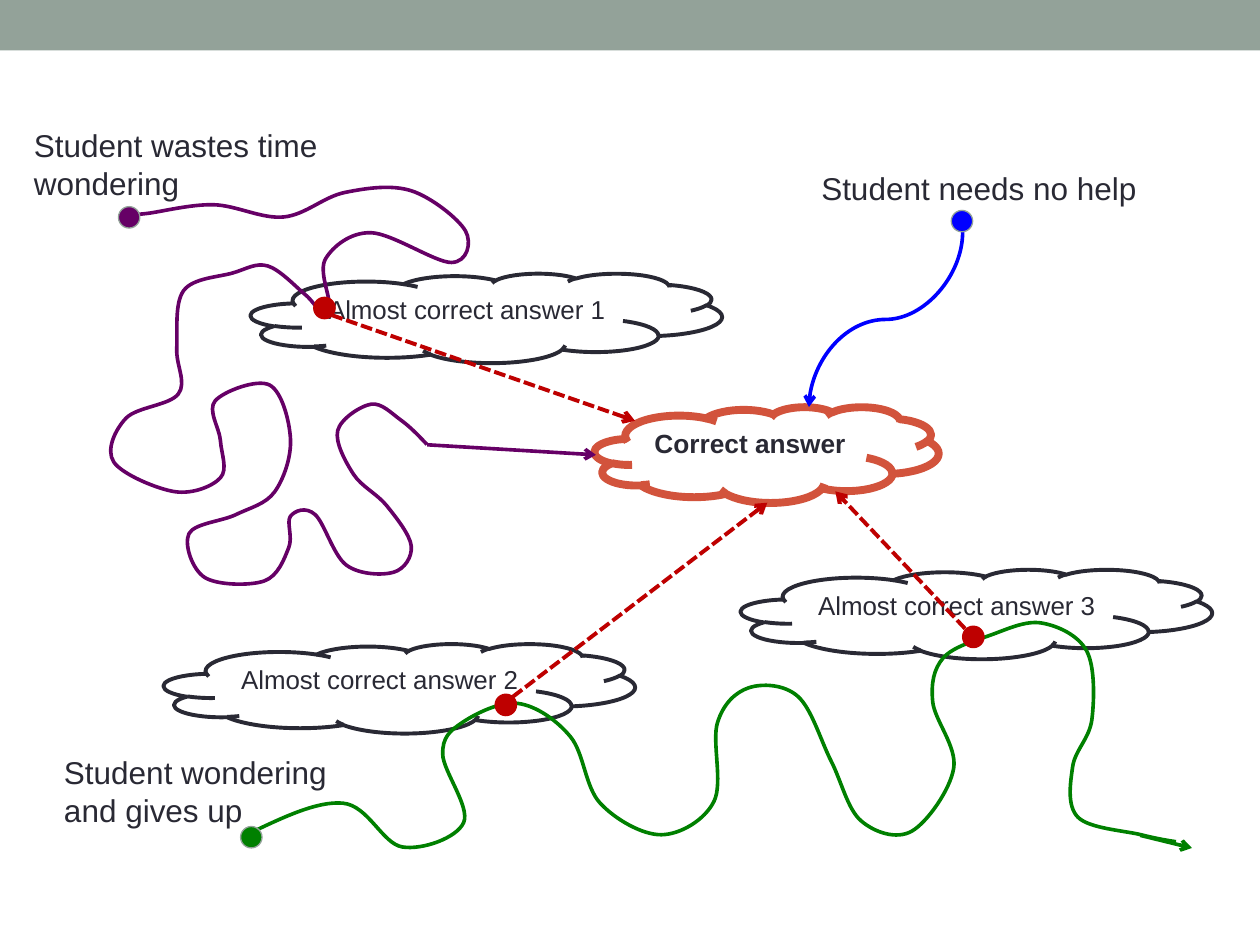
"""Build a slide of student paths wandering towards a correct answer."""
from pptx import Presentation, util as u
from pptx.dml.color import RGBColor
from pptx.enum import dml, shapes, text
from pptx.oxml import ns, xmlchemy

INK, SAGE, RUST = "292934", "93A299", "D2533C"
PURPLE, BLUE, GREEN, RED = "660066", "0000FF", "008000", "BE0000"
PATH_WIDTH, HINT_WIDTH = 2.08, 2.25
DOT_SIZE = 12.24

ALMOST = dict(size=(269.28, 51.12), color=INK, weight=2.25, font_size=14.8, bold=False)
CORRECT = dict(size=(196.56, 54.72), color=RUST, weight=4.5, font_size=15, bold=True)
CLOUDS = [
    ("Almost correct answer 1", (143.28, 156.24), ALMOST),
    ("Almost correct answer 2", (93.6, 367.92), ALMOST),
    ("Almost correct answer 3", (423.36, 325.44), ALMOST),
    ("Correct answer", (339.84, 232.56), CORRECT),
]
LABELS = [
    ("Student needs no help", 462.24, 92.88, 198.72, 28.8),
    ("Student wondering and gives up", 29.52, 426.96, 170.64, 51.12),
    ("Student wastes time wondering", 12.24, 68.4, 187.92, 51.12),
]
WANDERINGS = [
    (GREEN, [
        (143, 476), (196, 459), (230, 484), (265, 470), (253, 431), (264, 413),
        (296, 402), (326, 421), (343, 459), (378, 477), (408, 458), (410, 413),
        (428, 393), (456, 398), (475, 435), (492, 469), (521, 475), (545, 439),
        (533, 401), (539, 376), (566, 363), (595, 356), (621, 372), (624, 411),
        (613, 438), (616, 467), (652, 477), (672, 481)]),
    (PURPLE, [
        (78, 122), (84, 122), (122, 117), (162, 124), (197, 110), (235, 109),
        (266, 132), (258, 150), (212, 133), (186, 148), (188, 174), (182, 176),
        (174, 168), (153, 152), (133, 156), (105, 166), (101, 199), (102, 225),
        (72, 239), (65, 264), (100, 281), (126, 273), (126, 252), (123, 229),
        (154, 220), (166, 251), (157, 281), (135, 294), (108, 305), (117, 330),
        (151, 332), (165, 313), (166, 295), (180, 294), (198, 323), (225, 327),
        (235, 312), (221, 289), (202, 271), (193, 246), (212, 231), (229, 240),
        (244, 254)]),
]
ENDINGS = [
    (GREEN, (651.6, 477.36), (681.12, 484.56)),
    (PURPLE, (244.08, 254.16), (340.56, 259.92)),
]
DIRECT_START, DIRECT_END = (550.08, 132.48), (462.24, 232.56)
HINTS = [
    ((189.36, 180), (362.88, 240.48)),
    ((293.04, 398.16), (438.48, 287.28)),
    ((551.52, 359.28), (477.36, 280.8)),
]
DOTS = [
    (PURPLE, SAGE, 67.68, 118.08), (BLUE, SAGE, 543.6, 120.24),
    (GREEN, SAGE, 137.52, 472.32), (RED, RED, 179.28, 169.92),
    (RED, RED, 282.96, 396.72), (RED, RED, 550.08, 357.84),
]


def rgb(color):
    return RGBColor.from_string(color)


def points(*lengths):
    return [u.Pt(length) for length in lengths]


def style(shape, fill=None, line=None, weight=0.75):
    shape.shadow.inherit = False
    if fill:
        shape.fill.solid()
        shape.fill.fore_color.rgb = rgb(fill)
    else:
        shape.fill.background()
    if line:
        shape.line.color.rgb = rgb(line)
        shape.line.width = u.Pt(weight)
    else:
        shape.line.fill.background()


def write(shape, words, size, bold=False):
    frame = shape.text_frame
    frame.word_wrap = True
    frame.vertical_anchor = text.MSO_ANCHOR.TOP
    para = frame.paragraphs[0]
    para.text = words
    para.alignment = text.PP_ALIGN.LEFT
    para.font.name, para.font.size, para.font.bold = "Arial", u.Pt(size), bold
    para.font.color.rgb = rgb(INK)


def add_arrow(page, start, end, color, weight, kind=shapes.MSO_CONNECTOR.STRAIGHT):
    arrow = page.shapes.add_connector(kind, *points(*start, *end))
    arrow.line.color.rgb = rgb(color)
    arrow.line.width = u.Pt(weight)
    props = arrow._element.spPr
    head = xmlchemy.OxmlElement("a:tailEnd")
    head.set("type", "arrow")
    props.find(ns.qn("a:ln")).append(head)
    props.append(xmlchemy.OxmlElement("a:effectLst"))
    return arrow


def add_upright_curve(page, start, end, color, weight):
    (x1, y1), (x2, y2) = start, end
    middle_x, middle_y = (x1 + x2) / 2, (y1 + y2) / 2
    half_width, half_height = (y2 - y1) / 2, (x1 - x2) / 2
    curve = add_arrow(page, (middle_x - half_width, middle_y - half_height),
                      (middle_x + half_width, middle_y + half_height),
                      color, weight, shapes.MSO_CONNECTOR.CURVE)
    curve._element.spPr.find(ns.qn("a:xfrm")).set("rot", str(90 * 60000))


def smooth_spans(knots):
    last = len(knots) - 1
    for i in range(last):
        a, b = knots[i], knots[i + 1]
        leave = [p + (q - o) / 6 for o, p, q in zip(knots[max(i - 1, 0)], a, b)]
        reach = [q - (r - p) / 6 for p, q, r in zip(a, b, knots[min(i + 2, last)])]
        if i == 0:
            leave = [(p + c) / 2 for p, c in zip(a, reach)]
        if i == last - 1:
            reach = [(q + c) / 2 for q, c in zip(b, leave)]
        yield leave, reach, b


def add_wandering(page, color, knots):
    knots = [points(*knot) for knot in knots]
    builder = page.shapes.build_freeform(*knots[0])
    builder.add_line_segments(knots[1:], close=False)
    shape = builder.convert_to_shape()
    style(shape, line=color, weight=PATH_WIDTH)
    segments = list(shape._element.iter(ns.qn("a:lnTo")))
    for segment, span in zip(segments, smooth_spans(knots)):
        bezier = xmlchemy.OxmlElement("a:cubicBezTo")
        for x, y in span:
            point = xmlchemy.OxmlElement("a:pt")
            point.set("x", str(round(x - shape.left)))
            point.set("y", str(round(y - shape.top)))
            bezier.append(point)
        segment.getparent().replace(segment, bezier)


def main():
    deck = Presentation()
    deck.slide_width, deck.slide_height = points(720, 540)
    page = deck.slides.add_slide(deck.slide_layouts[6])
    preset = shapes.MSO_SHAPE

    band = page.shapes.add_shape(preset.RECTANGLE, *points(0, 0, 720, 28.8))
    style(band, fill=SAGE)
    for words, place, look in CLOUDS:
        cloud = page.shapes.add_shape(preset.CLOUD, *points(*place, *look["size"]))
        style(cloud, line=look["color"], weight=look["weight"])
        write(cloud, words, look["font_size"], look["bold"])
    for words, *place in LABELS:
        write(page.shapes.add_textbox(*points(*place)), words, 18)

    add_upright_curve(page, DIRECT_START, DIRECT_END, BLUE, PATH_WIDTH)
    for color, knots in WANDERINGS:
        add_wandering(page, color, knots)
    for color, start, end in ENDINGS:
        add_arrow(page, start, end, color, PATH_WIDTH)
    for fill, line, left, top in DOTS:
        dot = page.shapes.add_shape(preset.OVAL, *points(left, top, DOT_SIZE, DOT_SIZE))
        style(dot, fill, line)
    for start, end in HINTS:
        hint = add_arrow(page, start, end, RED, HINT_WIDTH)
        hint.line.dash_style = dml.MSO_LINE.SQUARE_DOT

    deck.save("out.pptx")


if __name__ == "__main__":
    main()
